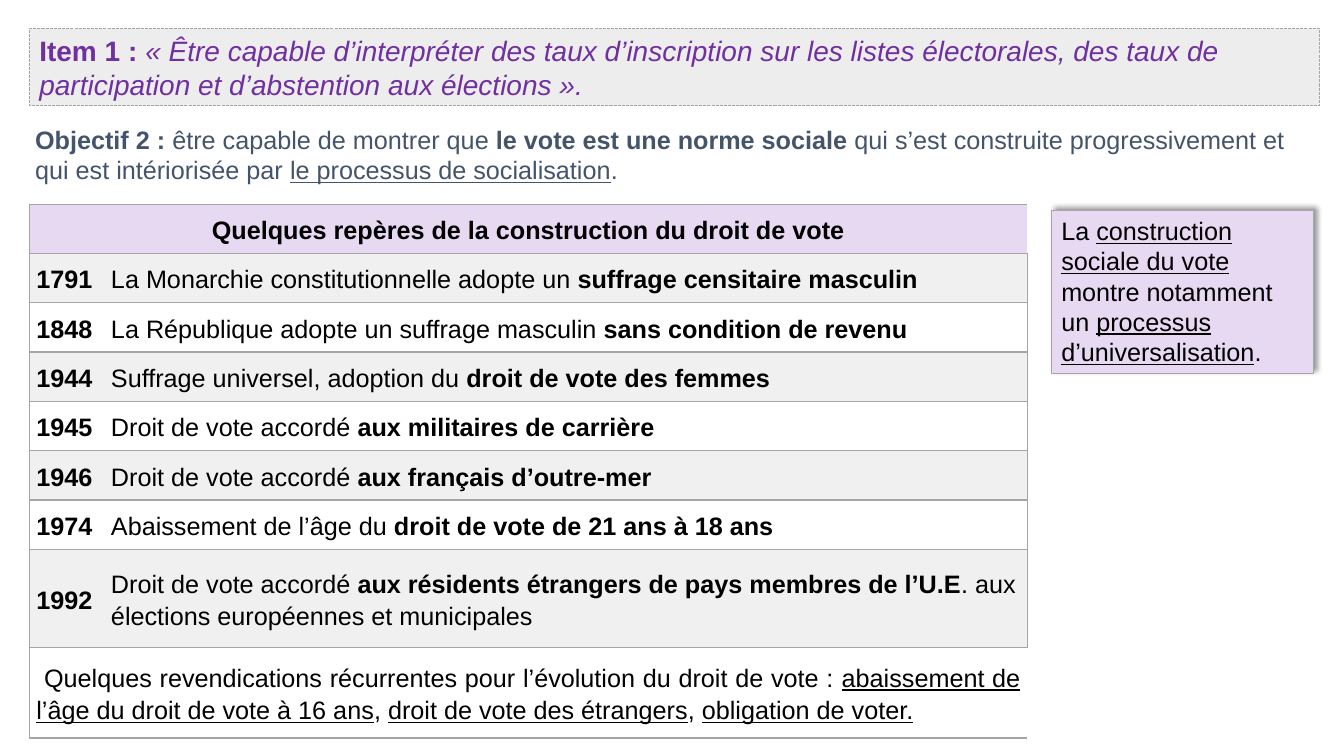
from dataclasses import dataclass

from lxml import etree
from pptx import Presentation
from pptx.dml.color import RGBColor
from pptx.enum import shapes, text
from pptx.enum.dml import MSO_LINE
from pptx.oxml import ns
from pptx.util import Pt


@dataclass(frozen=True)
class Theme:
    font: str = "Arial"
    body_size: float = 18
    title_size: float = 20
    black: str = "000000"
    slate: str = "44546A"
    purple: str = "7030A0"
    lilac: str = "E8D9F3"
    title_fill: str = "EDEDED"
    band: str = "F0F0F0"
    white: str = "FFFFFF"
    rule: str = "A5A5A5"
    outline: str = "A6A6A6"


@dataclass(frozen=True)
class Span:
    text: str
    bold: bool = False
    italic: bool = False
    underline: bool = False


@dataclass(frozen=True)
class Area:
    left: float
    top: float
    width: float
    height: float

    def lengths(self) -> list:
        return [Pt(value) for value in (self.left, self.top, self.width, self.height)]


@dataclass(frozen=True)
class Milestone:
    year: str
    spans: tuple
    height: float = 35.25


THEME = Theme()
TITLE_AREA = Area(21, 20.3, 921.6, 55.3)
GOAL_AREA = Area(18, 85, 919.5, 51)
TABLE_AREA = Area(21, 146.3, 712.8, 379.5)
SIDE_AREA = Area(751, 150.3, 187.2, 116.6)
YEAR_WIDTH = 53.3
HEADER_HEIGHT = 34.7
CLAIMS_HEIGHT = 64.8
CELL_MARGIN = 5

TITLE = (
    Span("Item 1 : ", bold=True),
    Span("« Être capable d’interpréter des taux d’inscription sur les listes électorales, "
         "des taux de participation et d’abstention aux élections ».", italic=True),
)
GOAL = (
    Span("Objectif 2 : ", bold=True),
    Span("être capable de montrer que "),
    Span("le vote est une norme sociale", bold=True),
    Span(" qui s’est construite progressivement et qui est intériorisée par "),
    Span("le processus de socialisation", underline=True),
    Span("."),
)
SIDE_NOTE = (
    Span("La "),
    Span("construction sociale du vote ", underline=True),
    Span("montre notamment un "),
    Span("processus d’universalisation", underline=True),
    Span("."),
)
HEADER = (Span("Quelques repères de la construction du droit de vote", bold=True),)
MILESTONES = (
    Milestone("1791", (Span("La Monarchie constitutionnelle adopte un "),
                       Span("suffrage censitaire masculin", bold=True))),
    Milestone("1848", (Span("La République adopte un suffrage masculin "),
                       Span("sans condition de revenu", bold=True))),
    Milestone("1944", (Span("Suffrage universel, adoption du "),
                       Span("droit de vote des femmes", bold=True))),
    Milestone("1945", (Span("Droit de vote accordé "),
                       Span("aux militaires de carrière", bold=True))),
    Milestone("1946", (Span("Droit de vote accordé "),
                       Span("aux français d’outre-mer", bold=True))),
    Milestone("1974", (Span("Abaissement de l’âge du "),
                       Span("droit de vote de 21 ans à 18 ans", bold=True))),
    Milestone("1992", (Span("Droit de vote accordé "),
                       Span("aux résidents étrangers de pays membres de l’U.E", bold=True),
                       Span(". aux élections européennes et municipales")), 70),
)
CLAIMS = (
    Span(" Quelques revendications récurrentes pour l’évolution du droit de vote : "),
    Span("abaissement de l’âge du droit de vote à 16 ans", underline=True),
    Span(", "),
    Span("droit de vote des étrangers", underline=True),
    Span(", "),
    Span("obligation de voter.", underline=True),
)


def write(frame, spans: tuple, color: str = THEME.black, size: float = THEME.body_size,
          align=text.PP_ALIGN.LEFT, before: float = 0, spacing: float = 1.0) -> None:
    frame.word_wrap = True
    para = frame.paragraphs[0]
    para.alignment = align
    para.space_before = Pt(before)
    para.line_spacing = spacing
    para.font.name = THEME.font
    para.font.size = Pt(size)
    para.font.color.rgb = RGBColor.from_string(color)
    for span in spans:
        run = para.add_run()
        run.text = span.text
        run.font.bold = span.bold
        run.font.italic = span.italic
        run.font.underline = span.underline


def add_panel(page, area: Area, fill: str):
    box = page.shapes.add_shape(shapes.MSO_SHAPE.RECTANGLE, *area.lengths())
    box.shadow.inherit = False
    box.fill.solid()
    box.fill.fore_color.rgb = RGBColor.from_string(fill)
    box.line.color.rgb = RGBColor.from_string(THEME.outline)
    box.line.width = Pt(0.75)
    box.text_frame.vertical_anchor = text.MSO_ANCHOR.TOP
    return box


def add_shadow(box) -> None:
    effects = box.element.spPr.find(ns.qn("a:effectLst"))
    shadow = etree.SubElement(effects, ns.qn("a:outerShdw"), blurRad=str(Pt(4)),
                              dist=str(Pt(3)), dir=str(315 * 60000), algn="bl", rotWithShape="0")
    color = etree.SubElement(shadow, ns.qn("a:srgbClr"), val=THEME.black)
    etree.SubElement(color, ns.qn("a:alpha"), val="40000")


def style_cell(cell, fill: str, sides: str) -> None:
    properties = cell._tc.get_or_add_tcPr()
    for side in "LRTB":
        line = etree.SubElement(properties, ns.qn(f"a:ln{side}"), w=str(Pt(1)))
        if side in sides:
            solid = etree.SubElement(line, ns.qn("a:solidFill"))
            etree.SubElement(solid, ns.qn("a:srgbClr"), val=THEME.rule)
        else:
            etree.SubElement(line, ns.qn("a:noFill"))
    cell.fill.solid()
    cell.fill.fore_color.rgb = RGBColor.from_string(fill)
    cell.vertical_anchor = text.MSO_ANCHOR.MIDDLE
    cell.margin_left = cell.margin_right = Pt(CELL_MARGIN)
    cell.margin_top = cell.margin_bottom = 0


def add_milestones(page) -> None:
    heights = [HEADER_HEIGHT, *(item.height for item in MILESTONES), CLAIMS_HEIGHT]
    table = page.shapes.add_table(len(heights), 2, *TABLE_AREA.lengths()).table
    table.first_row = table.horz_banding = False
    table.columns[0].width = Pt(YEAR_WIDTH)
    table.columns[1].width = Pt(TABLE_AREA.width - YEAR_WIDTH)
    for index, height in enumerate(heights):
        table.rows[index].height = Pt(height)
        fill = THEME.band if index % 2 else THEME.white
        style_cell(table.cell(index, 0), fill if index else THEME.lilac, "LTB")
        style_cell(table.cell(index, 1), fill if index else THEME.lilac, "RTB")
    for index, item in enumerate(MILESTONES, 1):
        write(table.cell(index, 0).text_frame, (Span(item.year, bold=True),), spacing=1.15)
        write(table.cell(index, 1).text_frame, item.spans, spacing=1.15)
    last = len(heights) - 1
    for index, spans, align in ((0, HEADER, text.PP_ALIGN.CENTER),
                                (last, CLAIMS, text.PP_ALIGN.JUSTIFY)):
        cell = table.cell(index, 0)
        cell.merge(table.cell(index, 1))
        write(cell.text_frame, spans, align=align, spacing=1.15)


def main() -> None:
    deck = Presentation()
    deck.slide_width, deck.slide_height = Pt(960), Pt(540)
    page = deck.slides.add_slide(deck.slide_layouts[6])

    goal = page.shapes.add_textbox(*GOAL_AREA.lengths())
    write(goal.text_frame, GOAL, THEME.slate, before=6)
    add_milestones(page)
    side = add_panel(page, SIDE_AREA, THEME.lilac)
    add_shadow(side)
    write(side.text_frame, SIDE_NOTE)
    title = add_panel(page, TITLE_AREA, THEME.title_fill)
    title.line.dash_style = MSO_LINE.SQUARE_DOT
    write(title.text_frame, TITLE, THEME.purple, THEME.title_size, before=12)
    deck.save("out.pptx")


if __name__ == "__main__":
    main()
